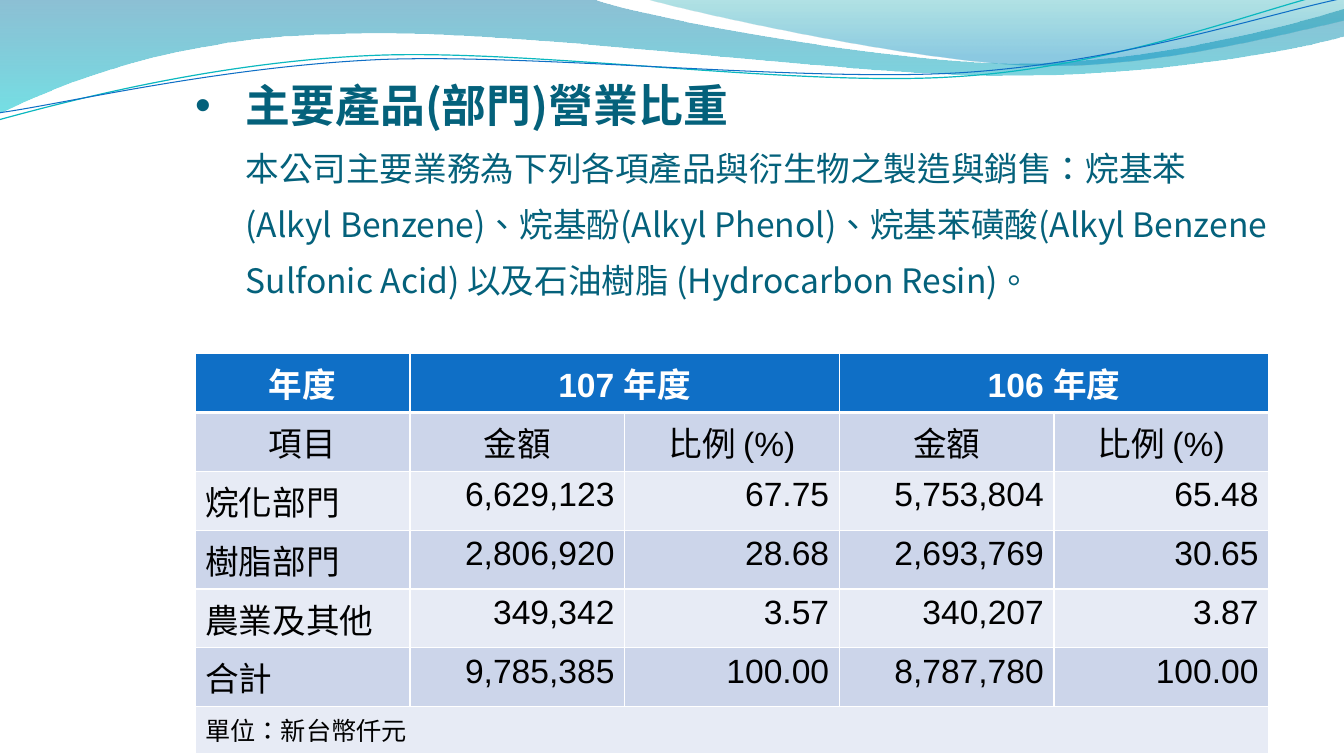
from lxml.etree import SubElement
from pptx import Presentation
from pptx.dml.color import RGBColor
from pptx.enum.text import MSO_ANCHOR as Anchor, MSO_AUTO_SIZE as AutoSize, PP_ALIGN as Align
from pptx.oxml.ns import qn
from pptx.util import Cm, Pt

CJK_FONT = "Noto Sans CJK SC"
LATIN_FONT = "Arial"
TEAL, BLUE, WHITE, BLACK = "04617B", "0F6FC6", "FFFFFF", "000000"
BANDS = ("CCD5EA", "E7EBF5")
HEADER_BORDERS = [("a:lnL", 1), ("a:lnR", 1), ("a:lnT", 1), ("a:lnB", 3)]
LEFT, WIDTH = 4.92, 27.05

HEADING = "主要產品(部門)營業比重"
BODY = ("本公司主要業務為下列各項產品與衍生物之製造與銷售：烷基苯(Alkyl Benzene)、"
        "烷基酚(Alkyl Phenol)、烷基苯磺酸(Alkyl Benzene Sulfonic Acid) "
        "以及石油樹脂 (Hydrocarbon Resin)。")
ROWS = [
    ["年度", "107 年度", "", "106 年度", ""],
    ["項目", "金額", "比例 (%)", "金額", "比例 (%)"],
    ["烷化部門", "6,629,123", "67.75", "5,753,804", "65.48"],
    ["樹脂部門", "2,806,920", "28.68", "2,693,769", "30.65"],
    ["農業及其他", "349,342", "3.57", "340,207", "3.87"],
    ["合計", "9,785,385", "100.00", "8,787,780", "100.00"],
    ["單位：新台幣仟元", "", "", "", ""],
]
MERGES = [(0, 1, 2), (0, 3, 4), (6, 0, 4)]

BROAD_WAVE = [
    (0, 0), (14.91, -0.03),
    (16.1, 0.43, 22.48, 1.6, 25.68, 1.6), (28.9, 1.6, 32.46, 0.66, 33.86, 0.23),
    (33.91, 0.91),
    (33.3, 1.12, 29.46, 1.93, 25.25, 1.91), (21.06, 1.91, 12.93, 0.71, 8.71, 0.86),
    (4.37, 0.91, 1.55, 2.11, -0.03, 2.87),
]
RIGHT_WAVE = [
    (16.23, -0.03),
    (17.25, 0.28, 23.09, 1.57, 26.04, 1.65), (28.98, 1.75, 32.56, 0.81, 33.86, 0.53),
    (33.86, 0),
]
CYAN_LINE = [
    (-0.03, 3.02),
    (1.63, 2.57, 5.36, 1.57, 9.37, 1.4), (13.39, 1.22, 20.07, 2.21, 24.13, 1.93),
    (28.19, 1.68, 31.8, 0.2, 33.81, -0.25),
]
BLUE_LINE = [
    (0, 2.84),
    (1.6, 2.62, 5.54, 1.68, 9.6, 1.5), (13.64, 1.35, 20.22, 2.08, 24.26, 1.83),
    (28.32, 1.57, 31.88, 0.36, 33.88, -0.05),
]


def color(hex_string):
    return RGBColor.from_string(hex_string)


class ReportSlide:
    def __init__(self, presentation):
        self.slide = presentation.slides.add_slide(presentation.slide_layouts[5])
        self.shapes = self.slide.shapes

    def outline(self, steps, closed):
        points = [(Cm(step[i]), Cm(step[i + 1])) for step in steps for i in range(0, len(step), 2)]
        builder = self.shapes.build_freeform(*points[0])
        builder.add_line_segments(points[1:], close=closed)
        shape = builder.convert_to_shape()
        shape.shadow.inherit = False
        segments = iter(list(shape._element.spPr.iter(qn("a:lnTo"))))
        for step in steps[1:]:
            group = [next(segments) for _ in range(len(step) // 2)]
            if len(group) == 3:
                curve = group[0]
                curve.tag = qn("a:cubicBezTo")
                for segment in group[1:]:
                    curve.append(segment[0])
                    segment.getparent().remove(segment)
        return shape

    def wave(self, steps, stops):
        shape = self.outline(steps, True)
        shape.line.fill.background()
        shape.fill.gradient()
        shape.fill.gradient_angle = 270
        for stop, (position, hex_string, opacity) in zip(shape.fill.gradient_stops, stops):
            stop.position = position
            stop.color.rgb = color(hex_string)
        tones = shape._element.spPr.iter(qn("a:srgbClr"))
        for tone, (position, hex_string, opacity) in zip(tones, stops):
            SubElement(tone, qn("a:alpha")).set("val", str(opacity * 1000))

    def line(self, steps, hex_string, width):
        shape = self.outline(steps, False)
        shape.fill.background()
        shape.line.color.rgb = color(hex_string)
        shape.line.width = Pt(width)

    def run(self, paragraph, text, font_name, size, hex_string, bold=False):
        run = paragraph.add_run()
        run.text = text
        run.font.name = font_name
        run.font.size = Pt(size)
        run.font.bold = bold
        run.font.color.rgb = color(hex_string)
        run.font._element.set("lang", "zh-TW")
        SubElement(run.font._element, qn("a:ea")).set("typeface", CJK_FONT)

    def title(self, heading, body):
        title = self.shapes.title
        self.shapes._spTree.append(title._element)
        title.left, title.top = Cm(LEFT), Cm(0.43)
        title.width, title.height = Cm(WIDTH), Cm(8.48)
        frame = title.text_frame
        frame.word_wrap = True
        frame.auto_size = AutoSize.NONE
        frame.vertical_anchor = Anchor.MIDDLE
        frame.margin_left = frame.margin_right = frame.margin_bottom = Cm(0)
        frame.margin_top = Cm(0.13)
        paragraph = frame.paragraphs[0]
        paragraph.alignment = Align.LEFT
        paragraph.line_spacing = Pt(40)
        paragraph.space_before, paragraph.space_after = Pt(24), Pt(18)
        properties = paragraph._p.get_or_add_pPr()
        properties.set("marL", str(Cm(1.27)))
        properties.set("indent", str(Cm(-1.27)))
        SubElement(properties, qn("a:buFont")).set("typeface", LATIN_FONT)
        SubElement(properties, qn("a:buChar")).set("char", "•")
        self.run(paragraph, heading, CJK_FONT, 32, TEAL, True)
        paragraph.add_line_break()
        self.run(paragraph, body, CJK_FONT, 24, TEAL)

    def border(self, cell):
        properties = cell._tc.get_or_add_tcPr()
        for index, (side, width) in enumerate(HEADER_BORDERS):
            edge = SubElement(properties, qn(side), w=str(Pt(width)))
            fill = SubElement(edge, qn("a:solidFill"))
            SubElement(fill, qn("a:srgbClr"), val=WHITE)
            properties.insert(index, edge)

    def table(self, rows, merges):
        frame = self.shapes.add_table(len(rows), len(rows[0]), Cm(LEFT), Cm(8.91),
                                      Cm(WIDTH), Cm(1.04 * len(rows)))
        table = frame.table
        for row, texts in enumerate(rows):
            for column, text in enumerate(texts):
                cell = table.cell(row, column)
                header = row == 0
                cell.fill.solid()
                cell.fill.fore_color.rgb = color(BLUE if header else BANDS[(row - 1) % 2])
                if header:
                    self.border(cell)
                if not text:
                    continue
                paragraph = cell.text_frame.paragraphs[0]
                if row < 2:
                    paragraph.alignment = Align.CENTER
                else:
                    paragraph.alignment = Align.RIGHT if column else Align.LEFT
                size = 18 if row == len(rows) - 1 else 24
                self.run(paragraph, text, LATIN_FONT, size, WHITE if header else BLACK, header)
        for row, first, last in merges:
            table.cell(row, first).merge(table.cell(row, last))


def main():
    presentation = Presentation()
    presentation.slide_width, presentation.slide_height = Cm(33.87), Cm(19.05)
    report = ReportSlide(presentation)
    report.wave(BROAD_WAVE, [(0, "0074A1", 45), (1, "00C6CF", 55)])
    report.wave(RIGHT_WAVE, [(0, "00A1A9", 30), (0.8, "008BBF", 45)])
    report.line(CYAN_LINE, "0AB8BF", 0.85)
    report.line(BLUE_LINE, BLUE, 0.75)
    report.title(HEADING, BODY)
    report.table(ROWS, MERGES)
    presentation.save("out.pptx")


if __name__ == "__main__":
    main()
